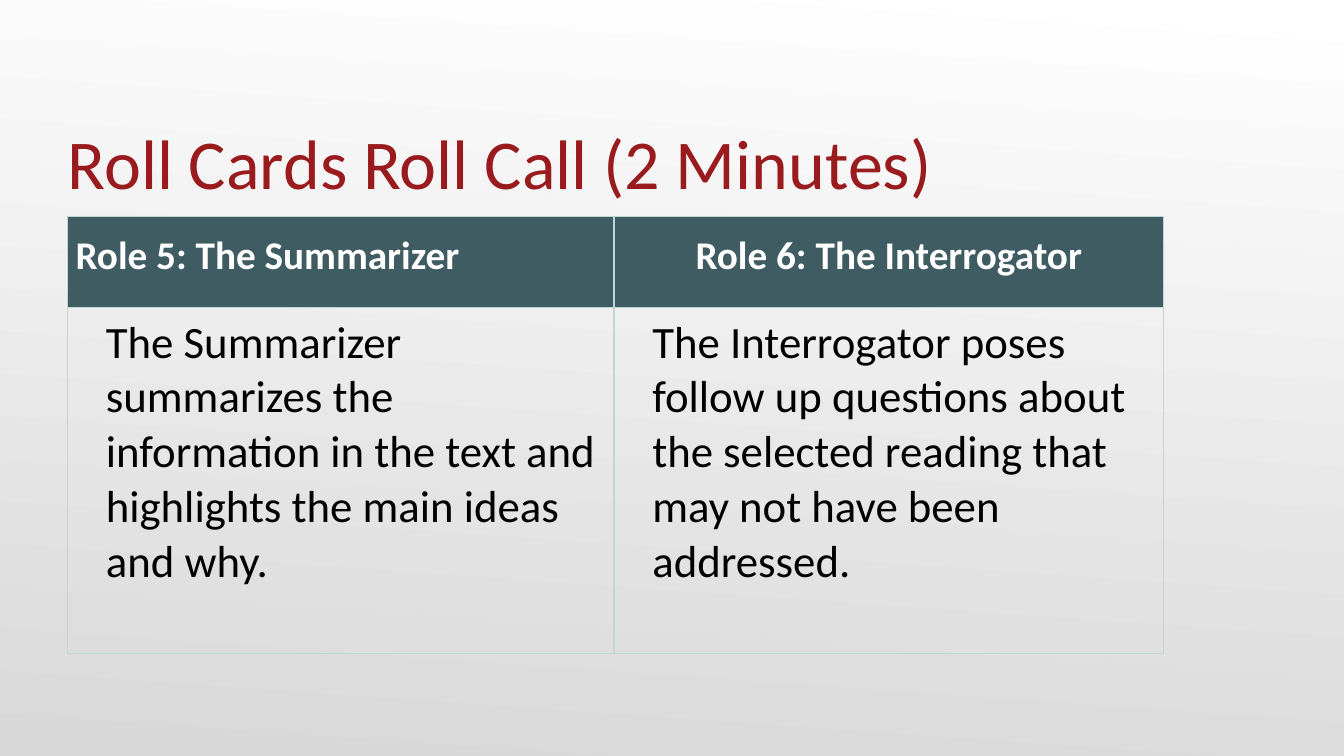
from lxml import etree
from pptx import Presentation
from pptx.dml.color import RGBColor
from pptx.enum.text import MSO_ANCHOR, MSO_AUTO_SIZE, PP_ALIGN
from pptx.oxml.ns import qn
from pptx.util import Inches, Pt

LEFT, CENTER = PP_ALIGN.LEFT, PP_ALIGN.CENTER
TOP, BOTTOM = MSO_ANCHOR.TOP, MSO_ANCHOR.BOTTOM
NO_AUTOFIT = MSO_AUTO_SIZE.NONE
FONT = "Calibri"
COLORS = {
    "title": "991B1E",
    "header": "3E5C61",
    "header_text": "FFFFFF",
    "body_text": "000000",
    "border": "BED7D3",
    "light": "FFFFFF",
    "dark": "D8D8D8",
}
# Heading, heading alignment, description
ROLES = [
    ("Role 5: The Summarizer", LEFT,
     "The Summarizer summarizes the information in the text and "
     "highlights the main ideas and why."),
    ("Role 6: The Interrogator", CENTER,
     "The Interrogator poses follow up questions about the selected "
     "reading that may not have been addressed."),
]
ROLE_WIDTHS = (5.42, 5.45)
HEADER_HEIGHT = 0.9


def rgb(name):
    return RGBColor.from_string(COLORS[name])


def style_text(paragraph, size, color, bold=False):
    for run in paragraph.runs:
        run.font.name = FONT
        run.font.size = Pt(size)
        run.font.bold = bold
        run.font.color.rgb = rgb(color)


def paint_background(slide):
    fill = slide.background.fill
    fill.gradient()
    fill.gradient_angle = 266
    for stop, name in zip(fill.gradient_stops, ("light", "dark")):
        stop.color.rgb = rgb(name)


def place_title(slide, left, top, width, height):
    title = slide.shapes.title
    title.left, title.top = Inches(left), Inches(top)
    title.width, title.height = Inches(width), Inches(height)
    frame = title.text_frame
    frame.text = "Roll Cards Roll Call (2 Minutes)"
    frame.word_wrap = True
    frame.auto_size = NO_AUTOFIT
    frame.vertical_anchor = BOTTOM
    frame.margin_left = frame.margin_right = frame.margin_bottom = 0
    frame.margin_top = Inches(0.05)
    heading = frame.paragraphs[0]
    heading.alignment = LEFT
    style_text(heading, 50, "title")


def add_borders(cell):
    properties = cell._tc.get_or_add_tcPr()
    for position, side in enumerate(("lnL", "lnR", "lnT", "lnB")):
        line = etree.Element(qn(f"a:{side}"), w=str(Pt(1)))
        solid = etree.SubElement(line, qn("a:solidFill"))
        etree.SubElement(solid, qn("a:srgbClr"), val=COLORS["border"])
        properties.insert(position, line)


def fill_cell(cell, text, alignment):
    cell.text_frame.text = text
    cell.vertical_anchor = TOP
    cell.margin_left = cell.margin_right = Inches(0.08)
    cell.margin_top = cell.margin_bottom = Inches(0.08)
    add_borders(cell)
    paragraph = cell.text_frame.paragraphs[0]
    paragraph.alignment = alignment
    return paragraph


def place_roles(slide, left, top, height):
    frame = slide.shapes.add_table(
        2, len(ROLES), Inches(left), Inches(top),
        Inches(sum(ROLE_WIDTHS)), Inches(height))
    roles = frame.table
    roles.horz_banding = False
    roles.rows[0].height = Inches(HEADER_HEIGHT)
    roles.rows[1].height = Inches(height - HEADER_HEIGHT)

    for column, (heading, alignment, description) in enumerate(ROLES):
        roles.columns[column].width = Inches(ROLE_WIDTHS[column])

        # Role heading
        header = roles.cell(0, column)
        paragraph = fill_cell(header, heading, alignment)
        paragraph.line_spacing = 1.15
        style_text(paragraph, 28, "header_text", bold=True)
        header.fill.solid()
        header.fill.fore_color.rgb = rgb("header")

        # Role description, indented
        body = roles.cell(1, column)
        paragraph = fill_cell(body, description, LEFT)
        paragraph._p.get_or_add_pPr().set("marL", str(Inches(0.3)))
        style_text(paragraph, 32, "body_text")
        body.fill.background()


def main():
    deck = Presentation()
    deck.slide_width, deck.slide_height = Inches(13.33), Inches(7.5)
    slide = deck.slides.add_slide(deck.slide_layouts[5])
    paint_background(slide)
    place_title(slide, 0.67, 0.77, 12, 1.25)
    place_roles(slide, 0.67, 2.15, 4.33)
    deck.save("out.pptx")


if __name__ == "__main__":
    main()
